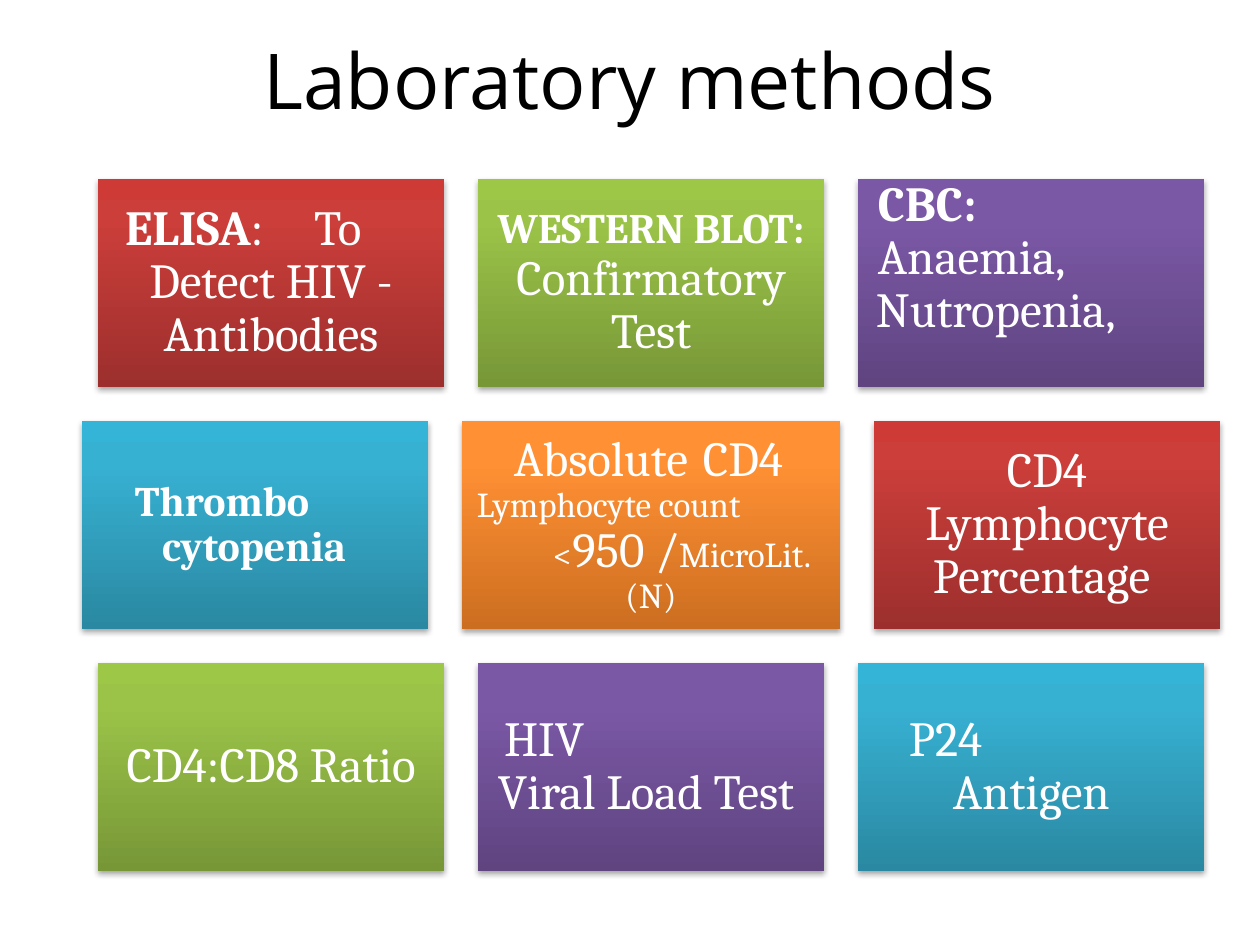
import pptx
import pptx.dml.color
import pptx.enum.shapes
import pptx.enum.text
import pptx.oxml
import pptx.oxml.ns
import pptx.util
from lxml import etree

PX = 914400 // 126
GAP = 34
ROW = 208
MID = 651
TOP = 179
ALIGN = pptx.enum.text.PP_ALIGN
ANCHOR = pptx.enum.text.MSO_ANCHOR

RED = ("9C2F2D", "CB3E3A", "CE3B37")
GREEN = ("779737", "9BC348", "9DC746")
PURPLE = ("5F4480", "7B58A6", "7C57A8")
BLUE = ("2A88A2", "37B1D2", "34B4D6")
ORANGE = ("CC6E20", "FF9034", "FF9136")


def rgb(code):
    return pptx.dml.color.RGBColor.from_string(code)


def line(*runs, left=None, tab=None):
    """A line of (text, size, bold) runs, centred unless a left indent is given."""
    return runs, left, tab


# Each row holds (width, colours, inset, anchor, lines) per tile.
ROWS = [
    [
        (346, RED, 15, "MIDDLE", [
            line(("ELISA", 28, True), (":\tTo", 28, False), left=12, tab=258),
            line(("Detect HIV - Antibodies", 28, False))]),
        (346, GREEN, 13, "MIDDLE", [
            line(("WESTERN BLOT: ", 24, True), ("Confirmatory Test", 28, False))]),
        (346, PURPLE, 15, "TOP", [
            line(("CBC:\t", 28, True), ("Anaemia,", 28, False), left=5, tab=126),
            line(("Nutropenia,", 28, False), left=3)]),
    ],
    [
        (346, BLUE, 13, "MIDDLE", [
            line(("Thrombo", 24, True), left=40),
            line(("cytopenia", 24, True), left=67)]),
        (378, ORANGE, 15, "MIDDLE", [
            line(("Absolute\tCD4", 28, False), left=37, tab=232),
            line(("Lymphocyte count", 20, False), left=0),
            line(("<", 20, False), ("950 /", 28, False),
                 ("MicroLit.", 20, False), left=76),
            line(("(N)", 20, False))]),
        (346, RED, 15, "MIDDLE", [
            line(("CD4 Lymphocyte Percentage ", 28, False))]),
    ],
    [
        (346, GREEN, 15, "MIDDLE", [line(("CD4:CD8 Ratio", 28, False))]),
        (346, PURPLE, 15, "MIDDLE", [
            line(("HIV", 28, False), left=11),
            line(("Viral Load Test", 28, False), left=5)]),
        (346, BLUE, 15, "MIDDLE", [
            line(("P24", 28, False), left=36),
            line(("Antigen", 28, False), left=80)]),
    ],
]


def style(shape, colours):
    """Give a shape its upward gradient and soft shadow."""
    shape.line.fill.background()
    stops = "".join(
        f'<a:gs pos="{pos}"><a:srgbClr val="{code}"/></a:gs>'
        for pos, code in zip((0, 80000, 100000), colours))
    space = pptx.oxml.ns.nsdecls("a")
    grad = pptx.oxml.parse_xml(
        f'<a:gradFill {space} rotWithShape="1"><a:gsLst>{stops}</a:gsLst>'
        '<a:lin ang="16200000" scaled="0"/></a:gradFill>')
    glow = pptx.oxml.parse_xml(
        f'<a:effectLst {space}><a:outerShdw blurRad="40000" dist="23000" '
        'dir="5400000" rotWithShape="0"><a:srgbClr val="000000">'
        '<a:alpha val="35000"/></a:srgbClr></a:outerShdw></a:effectLst>')
    props = shape._element.spPr
    props.find(pptx.oxml.ns.qn("a:prstGeom")).addnext(grad)
    props.append(glow)


def write(para, runs, left, tab):
    para.line_spacing = 0.9
    para.space_after = pptx.util.Pt(0)
    para.alignment = ALIGN.CENTER if left is None else ALIGN.LEFT
    props = para._p.get_or_add_pPr()
    if left:
        props.set("marL", str(left * PX))
        props.set("indent", "0")
    if tab:
        tabs = etree.SubElement(props, pptx.oxml.ns.qn("a:tabLst"))
        etree.SubElement(tabs, pptx.oxml.ns.qn("a:tab"),
                         pos=str(tab * PX), algn="l")
    para.font.name = "Cambria"
    para.font.color.rgb = rgb("FFFFFF")
    for text, size, bold in runs:
        run = para.add_run()
        run.text = text
        run.font.size = pptx.util.Pt(size)
        run.font.bold = bold


def add_tile(slide, x, y, wide, high, colours, inset, anchor, lines):
    tile = slide.shapes.add_shape(
        pptx.enum.shapes.MSO_SHAPE.RECTANGLE,
        x * PX, y * PX, wide * PX, high * PX)
    style(tile, colours)
    frame = tile.text_frame
    frame.word_wrap = True
    frame.vertical_anchor = ANCHOR[anchor]
    frame.margin_left = frame.margin_right = inset * PX
    frame.margin_top = frame.margin_bottom = 0
    for num, (runs, left, tab) in enumerate(lines):
        para = frame.add_paragraph() if num else frame.paragraphs[0]
        write(para, runs, left, tab)


def add_grid(slide, mid, top):
    """Stack the rows of tiles, each row centred on mid."""
    for num, row in enumerate(ROWS):
        span = sum(tile[0] for tile in row) + GAP * (len(row) - 1)
        x = mid - span // 2
        for wide, *rest in row:
            add_tile(slide, x, top + num * (ROW + GAP), wide, ROW, *rest)
            x += wide + GAP


def add_title(slide, x, y, wide, high):
    box = slide.shapes.add_textbox(x * PX, y * PX, wide * PX, high * PX)
    frame = box.text_frame
    frame.word_wrap = True
    frame.vertical_anchor = ANCHOR.MIDDLE
    para = frame.paragraphs[0]
    para.text = "Laboratory methods"
    para.alignment = ALIGN.CENTER
    para.font.name = "Open Sans"
    para.font.size = pptx.util.Pt(44)
    para.font.color.rgb = rgb("000000")


def main():
    deck = pptx.Presentation()
    deck.slide_width = 1260 * PX
    deck.slide_height = 945 * PX
    slide = deck.slides.add_slide(deck.slide_layouts[6])
    add_title(slide, 63, 0, 1134, 158)
    add_grid(slide, MID, TOP)
    deck.save("out.pptx")


if __name__ == "__main__":
    main()
